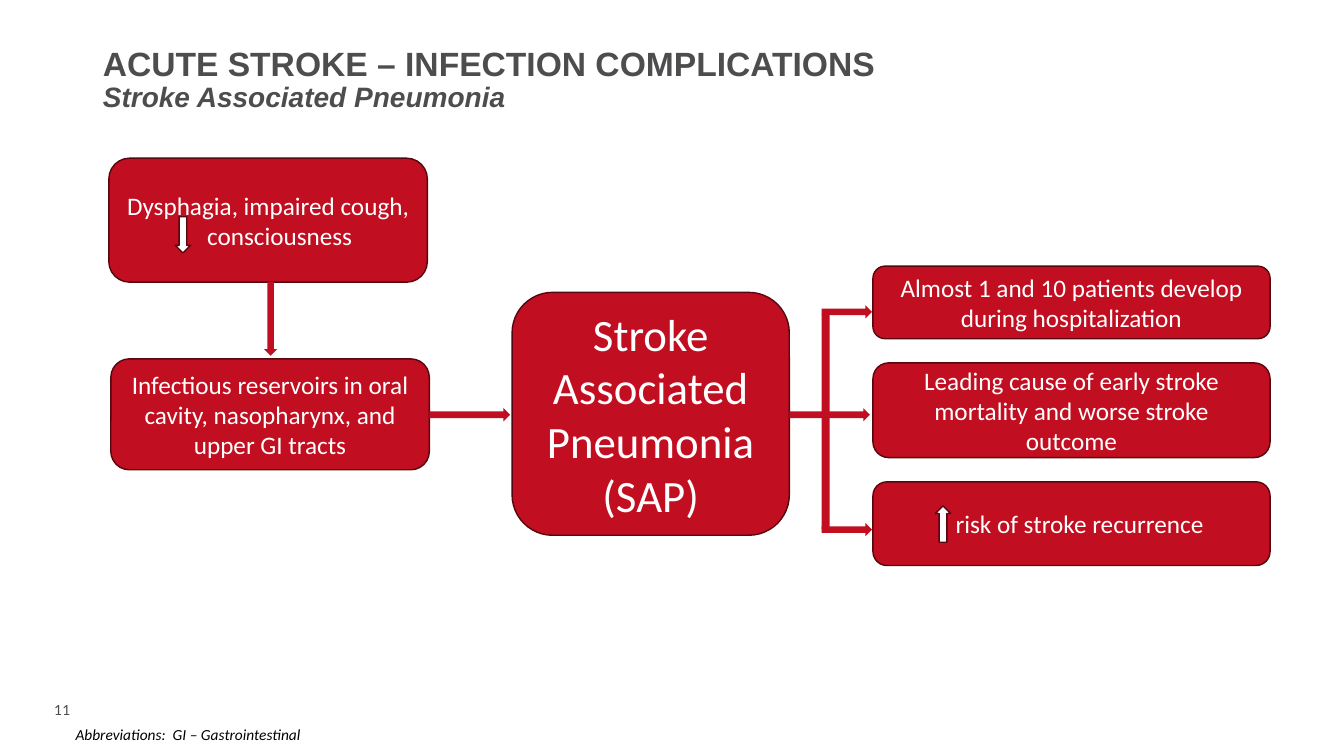
from lxml import etree
from pptx import Presentation
from pptx.dml.color import RGBColor
from pptx.enum.shapes import MSO_SHAPE
from pptx.enum.text import MSO_ANCHOR, MSO_AUTO_SIZE, PP_ALIGN
from pptx.oxml.ns import qn
from pptx.util import Inches, Pt

BOX = MSO_SHAPE.FLOWCHART_ALTERNATE_PROCESS
BAR = MSO_SHAPE.RECTANGLE
UP, DOWN, RIGHT = MSO_SHAPE.UP_ARROW, MSO_SHAPE.DOWN_ARROW, MSO_SHAPE.RIGHT_ARROW
LEFT, CENTER = PP_ALIGN.LEFT, PP_ALIGN.CENTER
MIDDLE, BOTTOM = MSO_ANCHOR.MIDDLE, MSO_ANCHOR.BOTTOM
NO_FIT = MSO_AUTO_SIZE.NONE

COLORS = {"red": "C10E20", "edge": "55060E", "white": "FFFFFF",
          "gray": "4D4D4F", "black": "000000"}
WIDTH, HEIGHT = Inches(13.33), Inches(7.5)
CAUSE_W = 23.7
EFFECT_X, EFFECT_W, EFFECT_TOP, EFFECT_GAP = 64.95, 29.55, 35.2, 3.2
EFFECTS = [
    ("Almost 1 and 10 patients develop during hospitalization", 9.6, 0),
    ("Leading cause of early stroke mortality and worse stroke outcome", 12.53, 0),
    ("risk of stroke recurrence", 11.07, 0.16),
]
ARROW_H = 1.73
FLOW_Y, FLOW_W = 54, 6
BRANCH_X, BRANCH_W = 61.13, 3.75
BRANCH_YS = (40.4, 69.2)


def rgb(name):
    return RGBColor.from_string(COLORS[name])


def share(left, top, width, height):
    return (int(WIDTH * left / 100), int(HEIGHT * top / 100),
            int(WIDTH * width / 100), int(HEIGHT * height / 100))


def style(r, size, font, color, bold=False, italic=False):
    r.font.size = Pt(size)
    r.font.name = font
    r.font.color.rgb = rgb(color)
    r.font.bold = bold
    r.font.italic = italic


def add_title(s, area, heading, subtitle):
    sp = s.shapes.title
    sp.left, sp.top, sp.width, sp.height = share(*area)
    tf = sp.text_frame
    tf.auto_size = NO_FIT
    tf.vertical_anchor = BOTTOM
    p = tf.paragraphs[0]
    p.text = f"{heading}\v{subtitle}"
    p.alignment = LEFT
    p.line_spacing = 0.9
    for r, size, italic in zip(p.runs, (24, 20), (False, True)):
        style(r, size, "Arial", "gray", True, italic)
    br = p._p.find(qn("a:br"))
    etree.SubElement(br, qn("a:rPr")).set("sz", "2400")


def add_label(s, area, text, size, font, color, italic=False, wrap=True):
    tf = s.shapes.add_textbox(*share(*area)).text_frame
    tf.word_wrap = wrap
    p = tf.paragraphs[0]
    p.text = text
    style(p.runs[0], size, font, color, italic=italic)


def add_block(s, kind, area, fill="red", outlined=False):
    sp = s.shapes.add_shape(kind, *share(*area))
    sp.shadow.inherit = False
    sp.fill.solid()
    sp.fill.fore_color.rgb = rgb(fill)
    if outlined:
        sp.line.color.rgb = rgb("edge")
        sp.line.width = Pt(1)
    else:
        sp.line.fill.background()
    return sp


def add_box(s, area, text, size=18, indent=0, hanging=False):
    tf = add_block(s, BOX, area, outlined=True).text_frame
    tf.word_wrap = True
    tf.vertical_anchor = MIDDLE
    p = tf.paragraphs[0]
    p.text = text
    p.alignment = CENTER
    if indent:
        pPr = p._p.get_or_add_pPr()
        pPr.set("marL", str(Inches(indent)))
        pPr.set("indent", str(-Inches(indent) if hanging else 0))
    style(p.runs[0], size, "Calibri", "white")


def add_trend(s, kind, left, top):
    add_block(s, kind, (left, top, 1.13, 4.8), "white", True)


def add_effects(s):
    top = EFFECT_TOP
    for text, height, indent in EFFECTS:
        add_box(s, (EFFECT_X, top, EFFECT_W, height), text, indent=indent)
        top += height + EFFECT_GAP
    add_trend(s, UP, 69.6, 66.93)


def add_causes(s):
    add_box(s, (8.1, 20.93, CAUSE_W, 16.4),
            "Dysphagia, impaired cough, consciousness", indent=0.23, hanging=True)
    add_trend(s, DOWN, 13.05, 28.67)
    add_box(s, (8.25, 47.47, CAUSE_W, 14.67),
            "Infectious reservoirs in oral cavity, nasopharynx, and upper GI tracts")


def add_flow(s):
    add_block(s, DOWN, (19.65, 37.33, 0.98, 9.73))
    for left in (31.95, 58.73):
        add_block(s, RIGHT, (left, FLOW_Y, FLOW_W, ARROW_H))
    add_block(s, BAR, (BRANCH_X, 41.6, 0.6, 28.4))
    for top in BRANCH_YS:
        add_block(s, RIGHT, (BRANCH_X, top, BRANCH_W, ARROW_H))


def main():
    prs = Presentation()
    prs.slide_width, prs.slide_height = WIDTH, HEIGHT
    s = prs.slides.add_slide(prs.slide_layouts[5])
    add_title(s, (6.9, 7.6, 86.25, 8.13),
              "ACUTE STROKE – INFECTION COMPLICATIONS", "Stroke Associated Pneumonia")
    add_label(s, (3.3, 92.13, 2.93, 3.6), "11", 10, "Lato", "gray", wrap=False)
    add_box(s, (38.1, 38.67, 20.63, 32.13), "Stroke Associated Pneumonia (SAP)", 32)
    add_effects(s)
    add_causes(s)
    add_label(s, (4.88, 95.2, 80.78, 3.87), "Abbreviations:  GI – Gastrointestinal",
              11, "Calibri", "black", italic=True)
    add_flow(s)
    prs.save("out.pptx")


if __name__ == "__main__":
    main()
